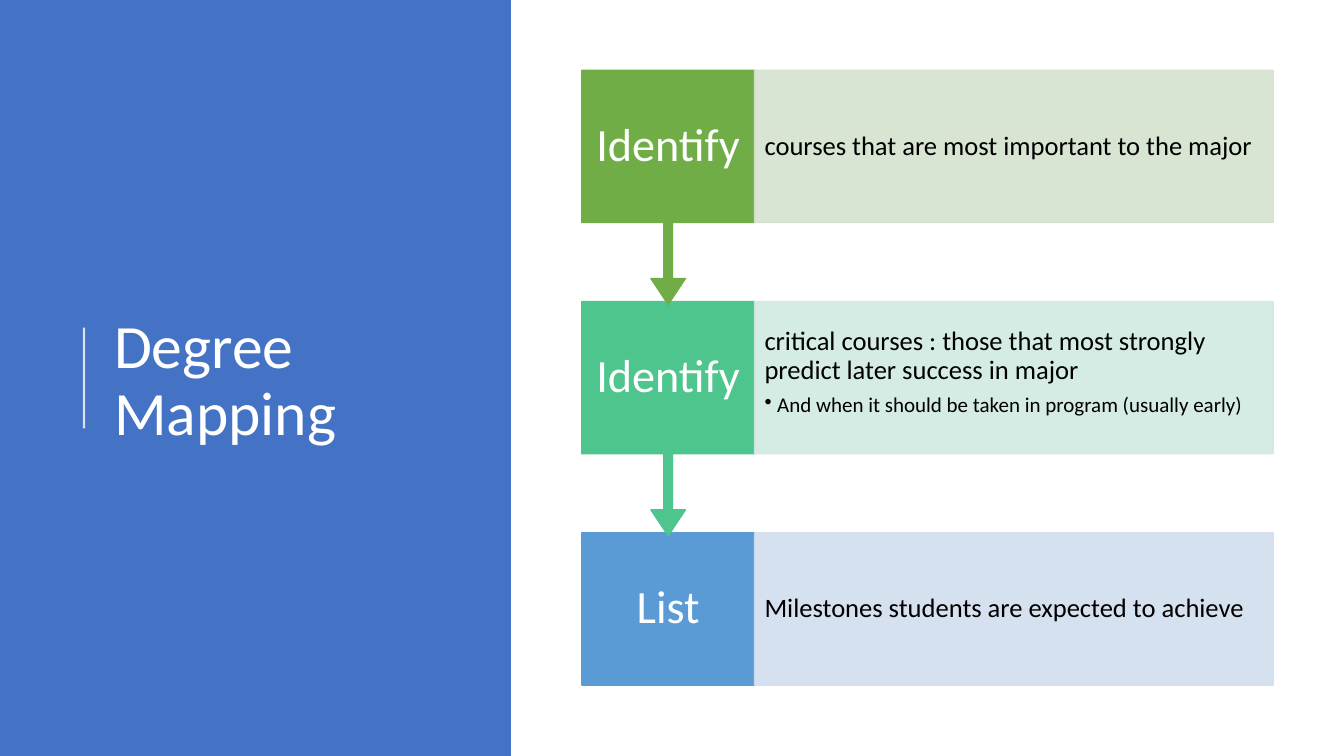
from lxml.etree import SubElement
from pptx import Presentation
from pptx.dml.color import RGBColor
from pptx.enum.shapes import MSO_CONNECTOR as Connector, MSO_SHAPE as Shape
from pptx.enum.text import MSO_ANCHOR as Anchor, PP_ALIGN as Align
from pptx.oxml.ns import qn
from pptx.util import Pt

TITLE = "Degree Mapping"
STEPS = [
    ("Identify", "green", "courses that are most important to the major", None),
    ("Identify", "teal",
     "critical courses : those that most strongly predict later success in major",
     "And when it should be taken in program (usually early)"),
    ("List", "blue", "Milestones students are expected to achieve", None),
]
COLORS = {
    "panel": "4472C4", "white": "FFFFFF", "black": "000000",
    "green": "70AD47", "teal": "4DC58D", "blue": "5B9BD5",
    "green_pale": "D5E3CF", "teal_pale": "D0EAE1", "blue_pale": "D2DEEF",
}
FONT = "Calibri"
SLIDE_WIDTH, SLIDE_HEIGHT = 960, 540
PANEL_WIDTH = 365
STEP_LEFT, STEP_TOP, STEP_PITCH = 415.6, 50.2, 165.2
LABEL_WIDTH, DETAIL_WIDTH, STEP_HEIGHT = 123.4, 370.4, 108.8
CALLOUT_HEIGHT = 167.3
CALLOUT_ADJUSTMENTS = (0.05, 0.1, 0.15, 0.65)


def set_alpha(color_format, percent):
    """Make a solid colour partly transparent."""
    color = color_format._xFill.find(qn("a:srgbClr"))
    SubElement(color, qn("a:alpha"), val=str(percent * 1000))


def add_block(page, kind, left, top, width, height, color, alpha=None, outline=True):
    block = page.shapes.add_shape(kind, Pt(left), Pt(top), Pt(width), Pt(height))
    block.shadow.inherit = False
    fills = [block.fill]
    if outline:
        block.line.width = Pt(1)
        fills.append(block.line.fill)
    else:
        block.line.fill.background()
    for fill in fills:
        fill.solid()
        fill.fore_color.rgb = RGBColor.from_string(COLORS[color])
        if alpha:
            set_alpha(fill.fore_color, alpha)
    return block


def set_frame(shape, side, end, anchor):
    frame = shape.text_frame
    frame.word_wrap = True
    frame.margin_left = frame.margin_right = Pt(side)
    frame.margin_top = frame.margin_bottom = Pt(end)
    frame.vertical_anchor = anchor
    return frame


def write(para, text, size, color, align=Align.LEFT, after=0):
    para.alignment = align
    para.line_spacing = 0.9
    para.space_after = Pt(after)
    span = para.add_run()
    span.text = text
    span.font.name = FONT
    span.font.size = Pt(size)
    span.font.color.rgb = RGBColor.from_string(COLORS[color])


def add_bullet(para, indent):
    properties = para._p.get_or_add_pPr()
    properties.set("marL", str(Pt(indent)))
    properties.set("indent", str(-Pt(indent)))
    SubElement(properties, qn("a:buChar"), char="•")


def add_title(page):
    add_block(page, Shape.RECTANGLE, 0, 0, PANEL_WIDTH, SLIDE_HEIGHT, "panel", outline=False)
    rule = page.shapes.add_connector(Connector.STRAIGHT, Pt(60), Pt(306), Pt(60), Pt(234))
    rule.line.width = Pt(1.5)
    rule.line.color.rgb = RGBColor.from_string(COLORS["white"])
    set_alpha(rule.line.fill.fore_color, 80)
    SubElement(rule._element.spPr, qn("a:effectLst"))
    box = page.shapes.add_textbox(Pt(74.4), Pt(56.2), Pt(265.6), Pt(433.4))
    frame = set_frame(box, 7.2, 3.6, Anchor.MIDDLE)
    write(frame.paragraphs[0], TITLE, 44, "white")


def add_step(page, top, label, color, detail, note, is_last):
    kind = Shape.RECTANGLE if is_last else Shape.DOWN_ARROW_CALLOUT
    height = STEP_HEIGHT if is_last else CALLOUT_HEIGHT
    head = add_block(page, kind, STEP_LEFT, top, LABEL_WIDTH, height, color)
    if not is_last:
        for index, value in enumerate(CALLOUT_ADJUSTMENTS):
            head.adjustments[index] = value
    frame = set_frame(head, 8.6, 18.7, Anchor.MIDDLE)
    write(frame.paragraphs[0], label, 33, "white", Align.CENTER)

    body = add_block(page, Shape.RECTANGLE, STEP_LEFT + LABEL_WIDTH, top,
                     DETAIL_WIDTH, STEP_HEIGHT, color + "_pale", alpha=90)
    frame = set_frame(body, 7.2, 18.7, Anchor.TOP if note else Anchor.MIDDLE)
    write(frame.paragraphs[0], detail, 19, "black", after=6.65)
    if note:
        para = frame.add_paragraph()
        para.level = 1
        write(para, note, 15, "black", after=2.25)
        add_bullet(para, 9)


def main():
    deck = Presentation()
    deck.slide_width, deck.slide_height = Pt(SLIDE_WIDTH), Pt(SLIDE_HEIGHT)
    page = deck.slides.add_slide(deck.slide_layouts[6])
    add_title(page)
    last = len(STEPS) - 1
    # Later steps go behind, so each arrow tip lies over the next block.
    for index in range(last, -1, -1):
        add_step(page, STEP_TOP + index * STEP_PITCH, *STEPS[index], index == last)
    deck.save("out.pptx")


if __name__ == "__main__":
    main()
